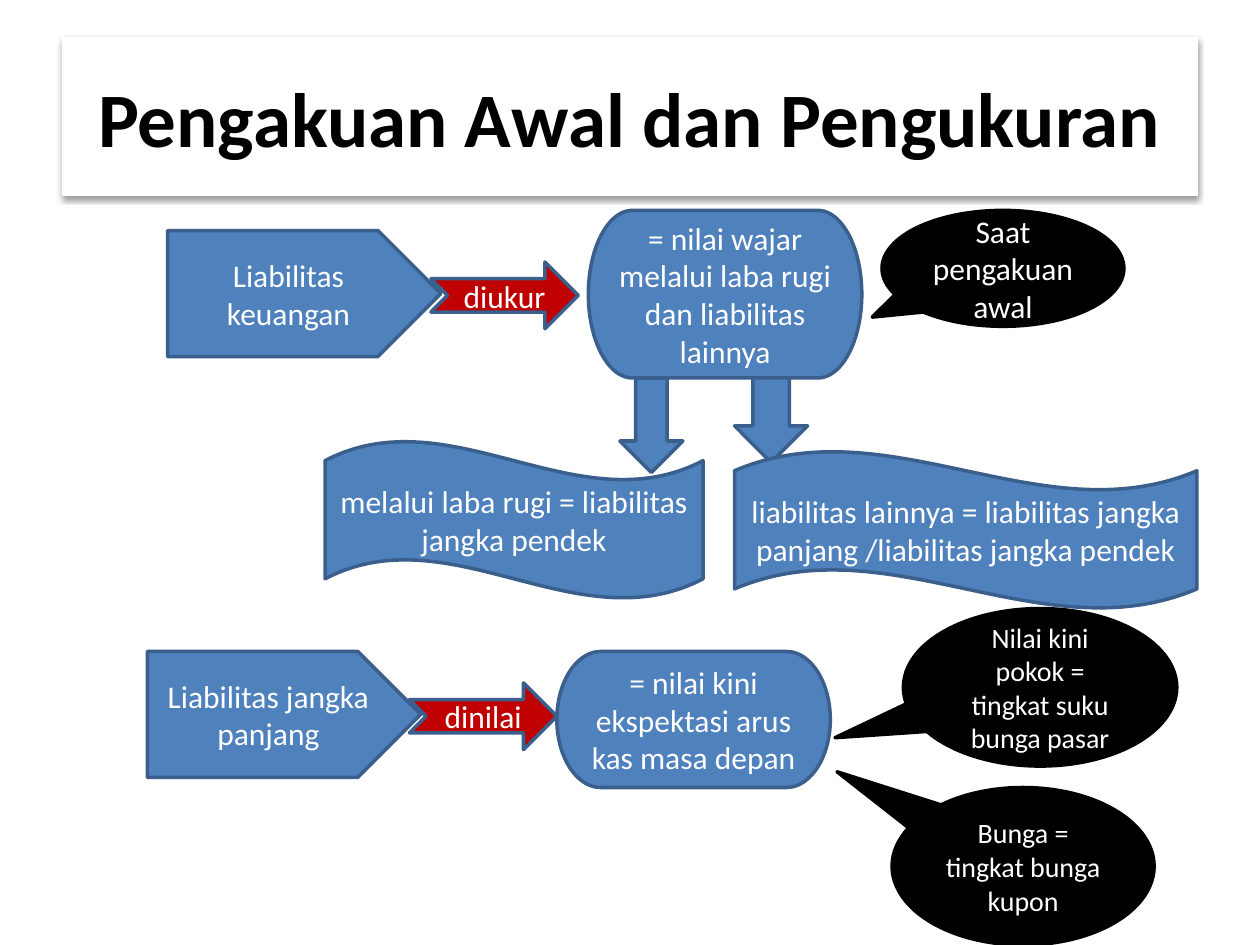
from lxml.etree import SubElement
from pptx import Presentation
from pptx.dml.color import RGBColor
from pptx.enum.shapes import MSO_SHAPE
from pptx.enum.text import MSO_ANCHOR, PP_ALIGN
from pptx.oxml.ns import qn
from pptx.util import Inches, Pt

BLUE, EDGE, RED = "4F81BD", "3A5F8C", "C00000"
BLACK, WHITE = "000000", "FFFFFF"


def color(text):
    return RGBColor.from_string(text)


class Deck:
    """Holds the style and the current slide."""
    font = "Calibri"

    def __init__(self):
        self.file = Presentation()
        self.file.slide_width = Inches(10)
        self.file.slide_height = Inches(7.5)
        self.slide = self.file.slides.add_slide(self.file.slide_layouts[5])

    def paint(self, shape, fill, edge, width):
        shape.fill.solid()
        shape.fill.fore_color.rgb = color(fill)
        shape.line.color.rgb = color(edge)
        shape.line.width = Pt(width)

    def label(self, shape, text, size, ink, bold=False):
        frame = shape.text_frame
        frame.word_wrap = True
        frame.vertical_anchor = MSO_ANCHOR.MIDDLE
        para = frame.paragraphs[0]
        para.alignment = PP_ALIGN.CENTER
        run = para.add_run()
        run.text = text
        run.font.name = self.font
        run.font.size = Pt(size)
        run.font.bold = bold
        run.font.color.rgb = color(ink)

    def title(self, text, left, top, width, height):
        shape = self.slide.shapes.title
        shape.left, shape.top = Inches(left), Inches(top)
        shape.width, shape.height = Inches(width), Inches(height)
        self.paint(shape, WHITE, WHITE, 0.75)
        self.label(shape, text, 44, BLACK, bold=True)
        # Soft shadow straight down
        effect = SubElement(shape.element.spPr, qn("a:effectLst"))
        shade = SubElement(effect, qn("a:outerShdw"), blurRad=str(Pt(3.1)),
                           dist=str(Pt(1.6)), dir="5400000", rotWithShape="0")
        tone = SubElement(shade, qn("a:srgbClr"), val=BLACK)
        SubElement(tone, qn("a:alpha"), val="38000")

    def shape(self, kind, left, top, width, height, text="", fill=BLUE,
              edge=EDGE, size=18):
        shape = self.slide.shapes.add_shape(
            kind, Inches(left), Inches(top), Inches(width), Inches(height))
        shape.shadow.inherit = False
        self.paint(shape, fill, edge, 2)
        if text:
            self.label(shape, text, size, WHITE)
        return shape

    def source(self, left, top, text):
        self.shape(MSO_SHAPE.PENTAGON, left, top, 2.17, 1, text)

    def step(self, left, top, text):
        self.shape(MSO_SHAPE.NOTCHED_RIGHT_ARROW, left, top, 1.17, 0.53,
                   text, RED)

    def result(self, left, top, height, text):
        self.shape(MSO_SHAPE.FLOWCHART_TERMINATOR, left, top, 2.17, height,
                   text)

    def callout(self, left, top, width, height, text, tip, size=16):
        shape = self.shape(MSO_SHAPE.OVAL_CALLOUT, left, top, width, height,
                           text, BLACK, BLACK, size)
        shape.adjustments[0], shape.adjustments[1] = tip

    def down(self, left, width, height):
        self.shape(MSO_SHAPE.DOWN_ARROW, left, 3, width, height)

    def wave(self, left, top, width, text):
        self.shape(MSO_SHAPE.WAVE, left, top, width, 1.25, text)


def main():
    deck = Deck()
    deck.title("Pengakuan Awal dan Pengukuran", 0.5, 0.3, 9, 1.25)

    # Upper row: first recognition
    deck.step(3.42, 2.08, "diukur")
    deck.result(4.67, 1.67, 1.33,
                "= nilai wajar melalui laba rugi dan liabilitas lainnya")
    deck.callout(7, 1.67, 1.92, 0.92, "Saat pengakuan awal",
                 (-0.54, 0.42), 18)
    deck.source(1.33, 1.83, "Liabilitas keuangan")

    # Lower row: long-term liabilities
    deck.source(1.17, 5.17, "Liabilitas jangka panjang")
    deck.step(3.25, 5.42, "dinilai")
    deck.result(4.42, 5.17, 1.08,
                "= nilai kini ekspektasi arus kas masa depan")
    deck.callout(7.17, 4.83, 2.17, 1.25,
                 "Nilai kini pokok = tingkat suku bunga pasar", (-0.75, 0.32))
    deck.callout(7.08, 6.25, 2.08, 1.25, "Bunga = tingkat bunga kupon",
                 (-0.71, -0.6))

    # Branches to the two classes
    deck.down(4.92, 0.5, 0.75)
    deck.down(5.83, 0.58, 0.67)
    deck.wave(2.58, 3.5, 3, "melalui laba rugi = liabilitas jangka pendek")
    deck.wave(5.83, 3.58, 3.67, "liabilitas lainnya = liabilitas jangka "
              "panjang /liabilitas jangka pendek")

    deck.file.save("out.pptx")


if __name__ == "__main__":
    main()
